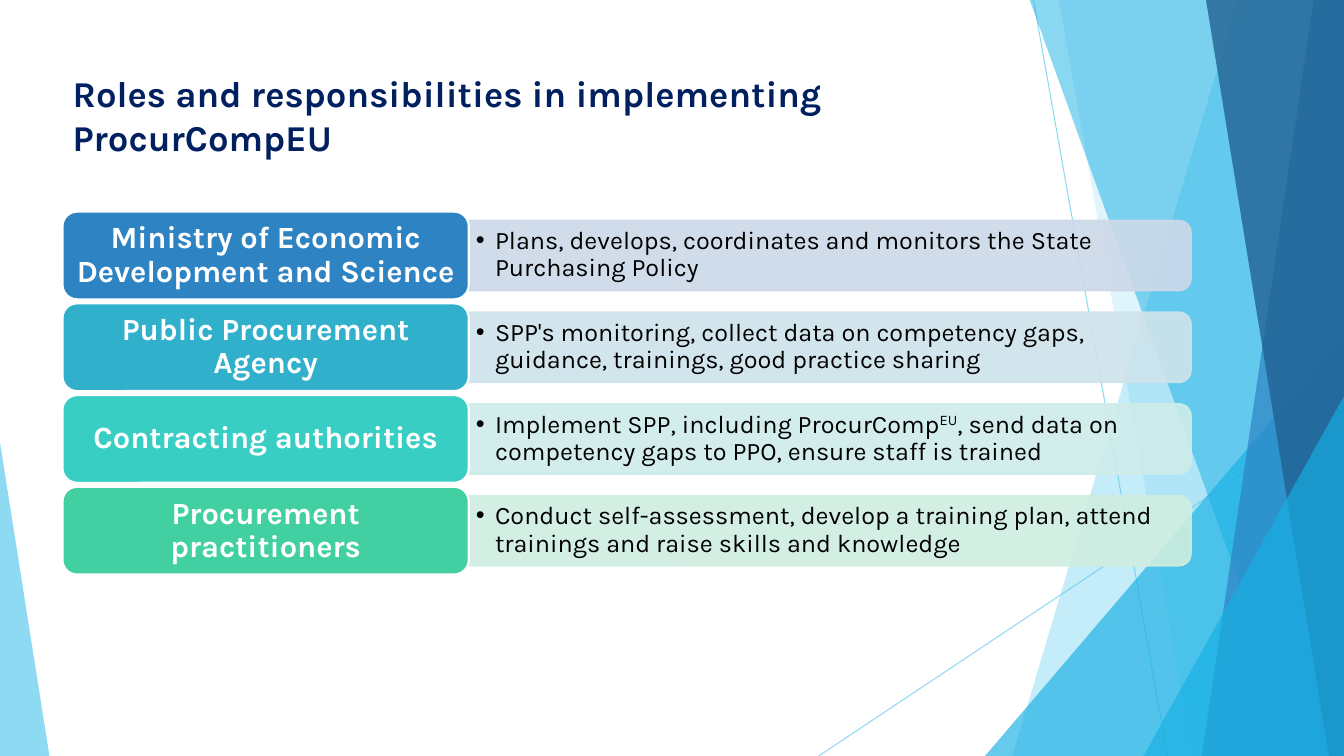
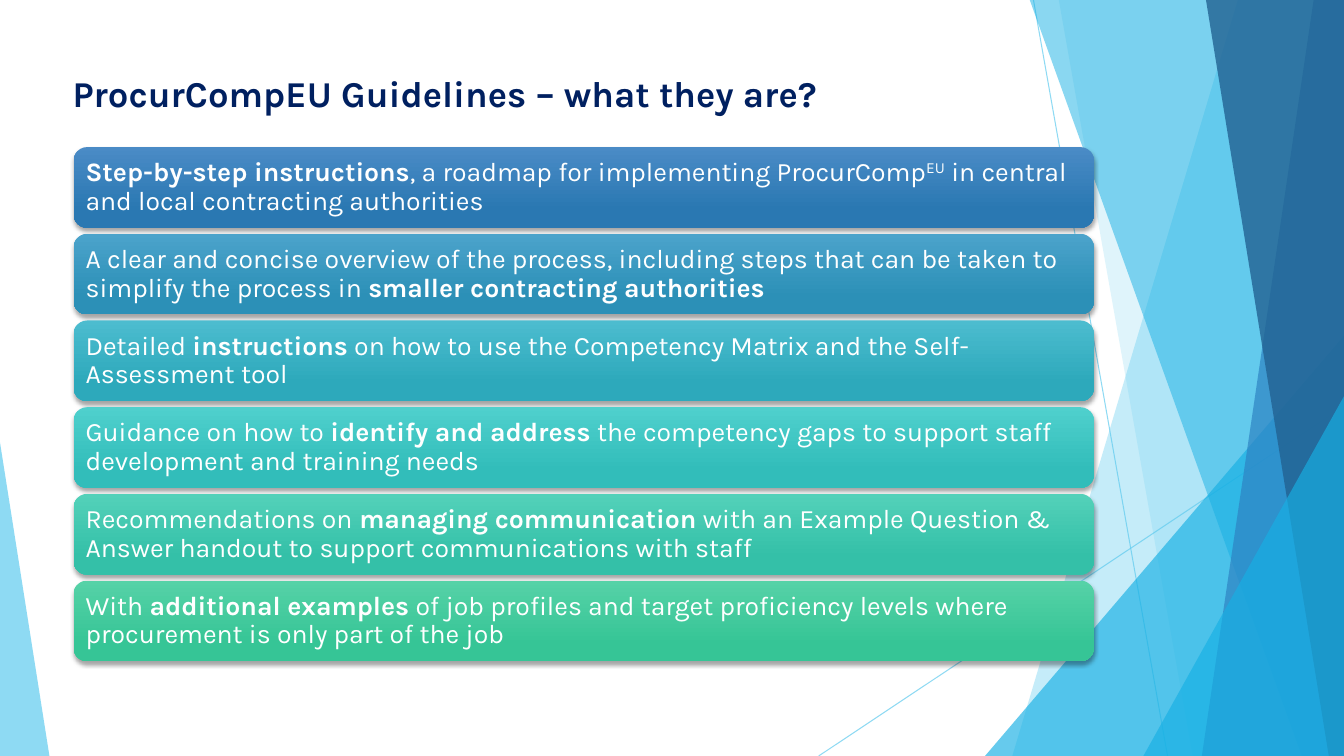
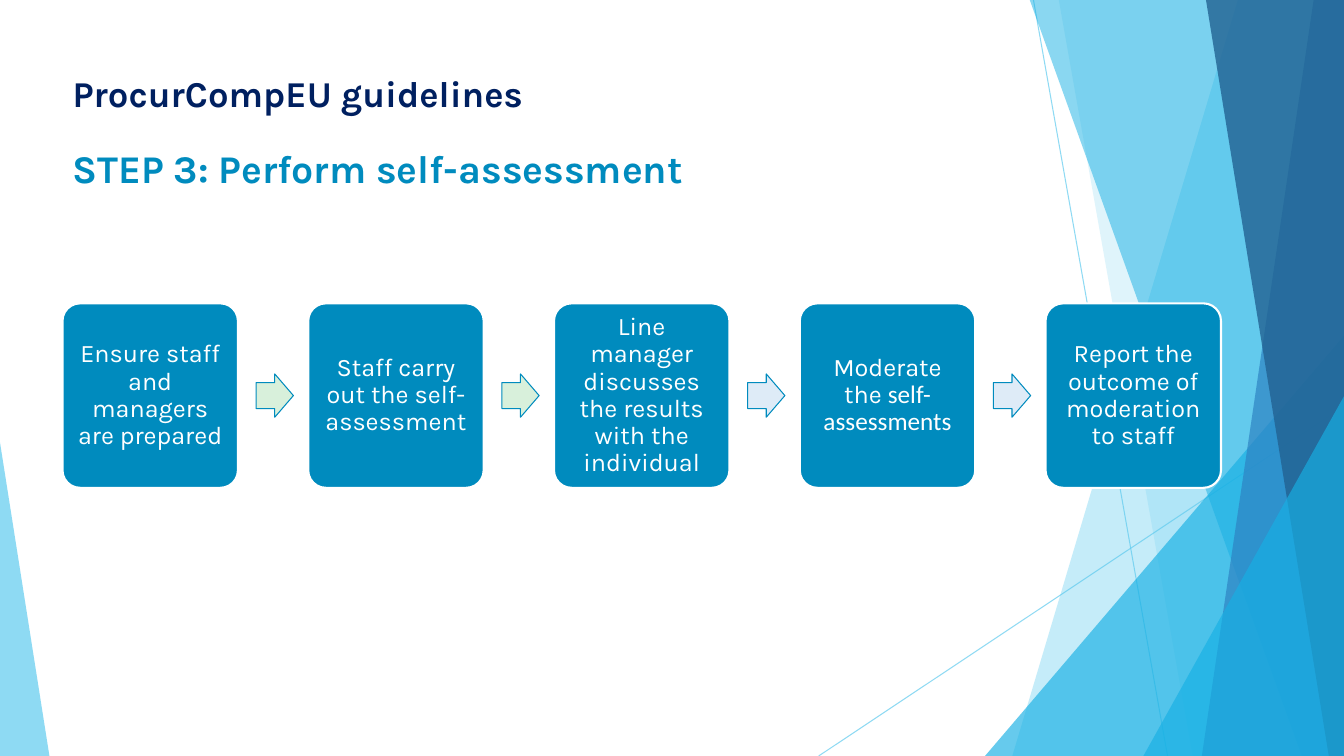
from lxml.etree import SubElement
from pptx import Presentation
from pptx.dml.color import RGBColor
from pptx.enum.shapes import MSO_CONNECTOR, MSO_SHAPE
from pptx.enum.text import MSO_ANCHOR, MSO_AUTO_SIZE, PP_ALIGN
from pptx.oxml.ns import qn
from pptx.util import Inches, Pt

COLORS = {
    "navy": "002060", "step": "008BBE", "white": "FFFFFF", "black": "000000",
    "sky": "5FCBEF", "cyan": "17B0E4", "blue": "2E83C3", "deep": "226292",
    "green_arrow": "D8F0DB", "blue_arrow": "DEEBF7",
}
C = {name: RGBColor.from_string(value) for name, value in COLORS.items()}
FONT = "Karla"
W, H = 13.33, 7.5


def fade(sp, percent):
    """Make the fill and line colours of a shape partly transparent."""
    for color in sp.element.spPr.iter(qn("a:srgbClr")):
        SubElement(color, qn("a:alpha"), val=str(percent * 1000))


def write(sp, runs, size, color, align=PP_ALIGN.LEFT, spacing=0.9,
          anchor=MSO_ANCHOR.MIDDLE, inset=(0.1, 0.05)):
    """Fill a shape with one paragraph of (text, style) runs."""
    tf = sp.text_frame
    tf.word_wrap = True
    tf.auto_size = MSO_AUTO_SIZE.NONE
    tf.vertical_anchor = anchor
    tf.margin_left = tf.margin_right = Inches(inset[0])
    tf.margin_top = tf.margin_bottom = Inches(inset[1])
    p = tf.paragraphs[0]
    p.alignment = align
    p.line_spacing = spacing
    for text, style in runs:
        r = p.add_run()
        r.text = text
        r.font.name = "Calibri" if style == "calibri" else FONT
        r.font.size = Pt(size)
        r.font.bold = style == "bold"
        r.font.color.rgb = color
        if style == "super":
            r._r.get_or_add_rPr().set("baseline", "30000")
    return p


prs = Presentation()
prs.slide_width, prs.slide_height = Inches(W), Inches(H)
layout = prs.slide_layouts[5]
for ph in list(layout.placeholders)[1:]:
    ph.element.getparent().remove(ph.element)

# Slides and titles
TITLES = [
    "Roles and responsibilities in implementing ProcurCompEU",
    "ProcurCompEU Guidelines – what they are?",
    "ProcurCompEU guidelines",
]
for title in TITLES:
    s = prs.slides.add_slide(layout)
    sp = s.shapes.title
    sp.left, sp.top, sp.width, sp.height = map(Inches, (0.62, 0.66, 9.4, 1.44))
    write(sp, [(title, "bold")], 26, C["navy"], spacing=1, anchor=MSO_ANCHOR.TOP)
roles, guidelines, steps = prs.slides

# Shared background: drawn once, then moved to the layout
decor = []
for x1, y1, x2, y2 in [(10.25, 0, 11.58, H), (W, 4.03, 8.12, H)]:
    line = roles.shapes.add_connector(
        MSO_CONNECTOR.STRAIGHT, Inches(x1), Inches(y1), Inches(x2), Inches(y2))
    line.line.color.rgb = C["sky"]
    line.line.width = Pt(0.75)
    SubElement(line.element.spPr, qn("a:effectLst"))
    fade(line, 70)
    decor.append(line)

# Bands run to the right edge: top left x, bottom left x
# Triangles: left, top, width, apex position
BACKGROUND = [
    ("band", (12.28, 10.04), "sky", 36),
    ("band", (10.5, 11.83), "sky", 20),
    ("triangle", (9.77, 3.33, 3.56, 1), "cyan", 66),
    ("band", (10.21, 12.91), "cyan", 50),
    ("band", (13.03, 11.92), "blue", 70),
    ("band", (11.96, 13.18), "deep", 80),
    ("triangle", (11.34, 3.93, 1.99, 1), "cyan", 66),
    ("triangle", (0, 4.39, 0.49, 0), "sky", 70),
]
for kind, place, color, percent in BACKGROUND:
    if kind == "band":
        top_x, bottom_x = place
        outline = roles.shapes.build_freeform(Inches(top_x), Inches(-0.01))
        corners = [(W, -0.01), (W, H), (bottom_x, H)]
        outline.add_line_segments([(Inches(x), Inches(y)) for x, y in corners])
        sp = outline.convert_to_shape()
    else:
        x, y, w, apex = place
        sp = roles.shapes.add_shape(MSO_SHAPE.ISOSCELES_TRIANGLE, Inches(x),
                                    Inches(y), Inches(w), Inches(H - y))
        sp.adjustments[0] = apex
    sp.shadow.inherit = False
    sp.fill.solid()
    sp.fill.fore_color.rgb = C[color]
    sp.line.fill.background()
    fade(sp, percent)
    decor.append(sp)

layout_title = layout.placeholders[0].element
for sp in decor:
    layout_title.addprevious(sp.element)

# Slide 1: roles and their duties
ROLES = [
    ("Ministry of Economic Development and Science", "2E83C3", "CDD9E9",
     [("Plans, develops, coordinates and monitors the State Purchasing Policy", "")]),
    ("Public Procurement Agency", "31B0CB", "CEE3EB",
     [("SPP's monitoring, collect data on competency gaps, guidance, trainings, "
       "good practice sharing", "")]),
    ("Contracting authorities", "39CEC4", "CEECEA",
     [("Implement SPP, including ProcurComp", ""), ("EU", "super"),
      (", send data on competency gaps to PPO, ensure staff is trained", "")]),
    ("Procurement practitioners", "42D0A2", "CFEEE0",
     [("Conduct self-assessment, develop a training plan, attend trainings and "
       "raise skills and knowledge", "")]),
]
for i, (role, strong, pale, duty) in enumerate(ROLES):
    y = 2.1 + 0.91 * i
    bar = roles.shapes.add_shape(MSO_SHAPE.ROUND_2_SAME_RECTANGLE, Inches(7.88),
                                 Inches(y - 3.15), Inches(0.69), Inches(7.17))
    bar.rotation = 90
    bar.shadow.inherit = False
    bar.fill.solid()
    bar.fill.fore_color.rgb = RGBColor.from_string(pale)
    bar.line.color.rgb = RGBColor.from_string(pale)
    bar.line.width = Pt(1.5)
    fade(bar, 90)

    tb = roles.shapes.add_textbox(Inches(4.65), Inches(y + 0.12),
                                  Inches(7.13), Inches(0.62))
    p = write(tb, duty, 18, C["black"], inset=(0.07, 0.04))
    pPr = p._p.get_or_add_pPr()
    pPr.set("marL", str(Inches(0.19)))
    pPr.set("indent", str(Inches(-0.19)))
    SubElement(pPr, qn("a:buFont"), typeface="Arial")
    SubElement(pPr, qn("a:buChar"), char="•")

    label = roles.shapes.add_shape(MSO_SHAPE.ROUNDED_RECTANGLE, Inches(0.62),
                                   Inches(y), Inches(4.03), Inches(0.87))
    label.shadow.inherit = False
    label.fill.solid()
    label.fill.fore_color.rgb = RGBColor.from_string(strong)
    label.line.color.rgb = C["white"]
    label.line.width = Pt(1.5)
    write(label, [(role, "bold")], 22, C["white"], PP_ALIGN.CENTER,
          inset=(0.09, 0.05))

# Slide 2: stacked guideline cards
GUIDELINES = [
    ("4A8BC6", "2A78B2",
     [("Step-by-step instructions", "bold"),
      (", a roadmap for implementing ProcurComp", ""), ("EU", "super"),
      (" in central and local contracting authorities", "")]),
    ("4BA3CB", "2C90B7",
     [("A clear and concise overview of the process, including steps that can be "
       "taken to simplify the process in ", ""),
      ("smaller contracting authorities", "bold")]),
    ("4CBCCF", "2DA9BB",
     [("Detailed ", ""), ("instructions", "bold"),
      (" on how to use the Competency Matrix and the Self-Assessment tool", "")]),
    ("4FD0CD", "32BDBA",
     [("Guidance on how to ", ""), ("identify and address", "bold"),
      (" the competency gaps to support staff development and training needs", "")]),
    ("53D1B9", "34C0A8",
     [("Recommendations on", ""), (" managing communication", "bold"),
      (" with an Example Question & Answer handout to support communications "
       "with staff", "")]),
    ("56D2A7", "36C596",
     [("With ", ""), ("additional examples", "bold"),
      (" of job profiles and target proficiency levels where procurement is only "
       "part of the job", "")]),
]
for i, (light, dark, runs) in enumerate(GUIDELINES):
    card = guidelines.shapes.add_shape(
        MSO_SHAPE.ROUNDED_RECTANGLE, Inches(0.73), Inches(1.46 + 0.86 * i),
        Inches(10.12), Inches(0.8))
    card.fill.gradient()
    card.fill.gradient_angle = 270
    for stop, position, color in zip(card.fill.gradient_stops, (0, 0.78),
                                     (light, dark)):
        stop.position = position
        stop.color.rgb = RGBColor.from_string(color)
    card.line.fill.background()
    card.shadow.inherit = False
    effects = card.element.spPr.find(qn("a:effectLst"))
    shadow = SubElement(effects, qn("a:outerShdw"), blurRad=str(Pt(3)),
                        dist=str(Pt(2)), dir="5400000", rotWithShape="0")
    black = SubElement(shadow, qn("a:srgbClr"), val=COLORS["black"])
    SubElement(black, qn("a:alpha"), val="35000")
    write(card, runs, 19, C["white"], inset=(0.08, 0.08))

# Slide 3: self-assessment process
STEPS = [
    [("Ensure staff and managers are prepared", "")],
    [("Staff carry out the self-assessment", "")],
    [("Line manager discusses the results with the individual", "")],
    [("Moderate the ", ""), ("self-assessments", "calibri")],
    [("Report the outcome of moderation to staff", "")],
]
ARROWS = ["green_arrow", "green_arrow", "blue_arrow", "blue_arrow"]
pitch = (10.37 - 0.62) / (len(STEPS) - 1)
for i, runs in enumerate(STEPS):
    x = 0.62 + pitch * i
    box = steps.shapes.add_shape(MSO_SHAPE.ROUNDED_RECTANGLE, Inches(x),
                                 Inches(3.01), Inches(1.74), Inches(1.83))
    box.adjustments[0] = 0.1
    box.shadow.inherit = False
    box.fill.solid()
    box.fill.fore_color.rgb = C["step"]
    box.line.color.rgb = C["white"]
    box.line.width = Pt(1.5)
    write(box, runs, 18, C["white"], PP_ALIGN.CENTER, inset=(0.07, 0.07))

    if i < len(ARROWS):
        arrow = steps.shapes.add_shape(MSO_SHAPE.RIGHT_ARROW, Inches(x + 1.92),
                                       Inches(3.71), Inches(0.37), Inches(0.43))
        arrow.adjustments[0] = 0.6
        arrow.adjustments[1] = 0.5
        arrow.shadow.inherit = False
        arrow.fill.solid()
        arrow.fill.fore_color.rgb = C[ARROWS[i]]
        arrow.line.color.rgb = C["step"]
        arrow.line.width = Pt(0.75)

# Slide 3: step heading
tb = steps.shapes.add_textbox(Inches(0.62), Inches(1.38), Inches(9.13), Inches(0.57))
write(tb, [("STEP 3: Perform self-assessment", "bold")], 28, C["step"],
      spacing=1, anchor=MSO_ANCHOR.TOP)

prs.save("out.pptx")
